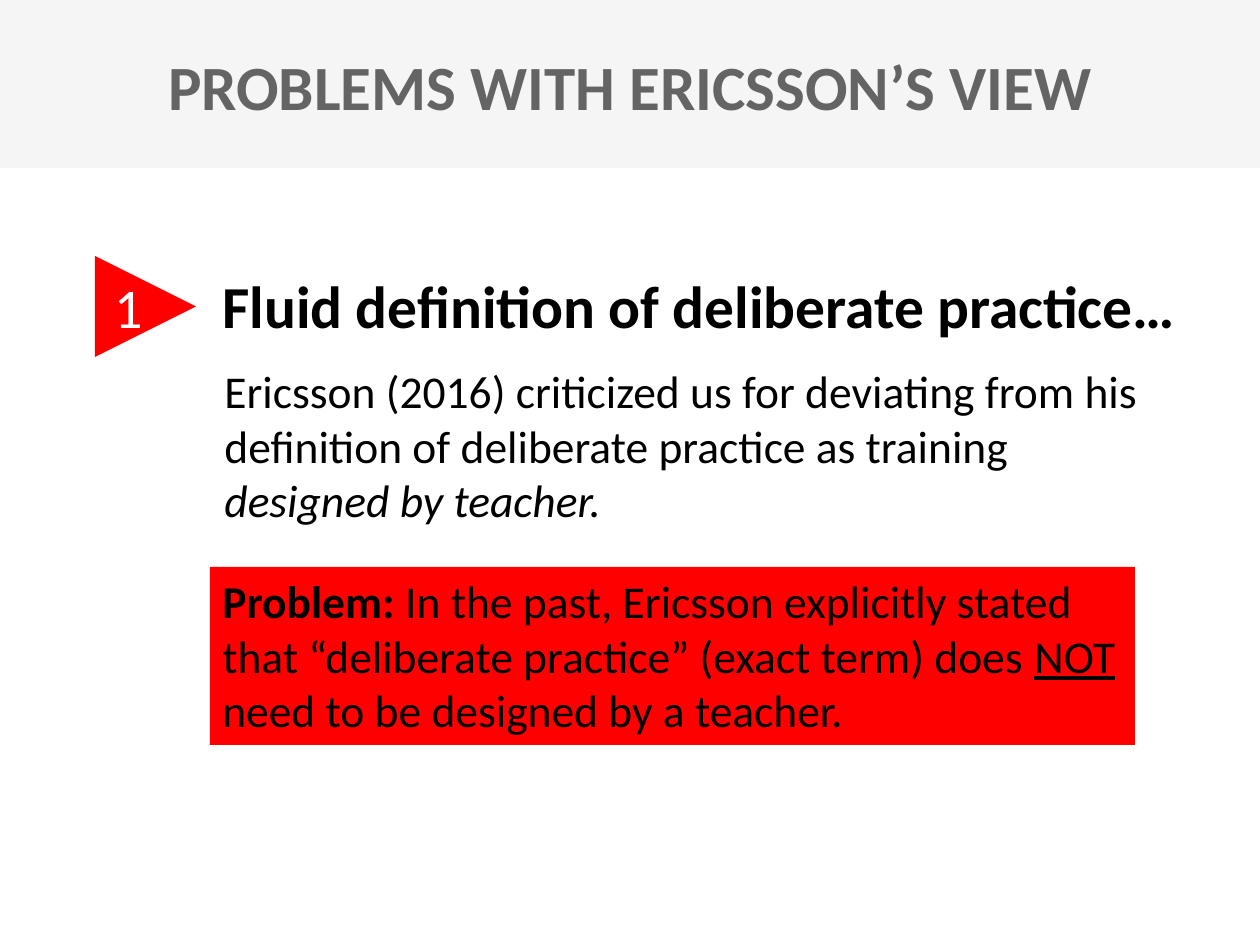
from pptx import Presentation
from pptx.dml.color import RGBColor
from pptx.enum.shapes import MSO_SHAPE
from pptx.enum.text import MSO_ANCHOR, MSO_AUTO_SIZE, PP_ALIGN
from pptx.util import Emu, Pt

PX = 914400 // 126
RED, BLACK, WHITE = "FF0000", "000000", "FFFFFF"
PALE, GREY = "F5F5F5", "646464"


def color(hex_code):
    return RGBColor.from_string(hex_code)


def px(*lengths):
    return [Emu(length * PX) for length in lengths]


class SlideBuilder:
    font_name = "Calibri"

    def __init__(self, slide):
        self.slide = slide

    def fill_frame(self, frame, runs, size, hex_code, align=PP_ALIGN.LEFT, anchor=MSO_ANCHOR.TOP):
        """Fill a frame with one paragraph of (text, font values) runs."""
        layout = {"word_wrap": True, "auto_size": MSO_AUTO_SIZE.NONE, "vertical_anchor": anchor}
        for name, value in layout.items():
            setattr(frame, name, value)
        paragraph = frame.paragraphs[0]
        paragraph.alignment = align
        for text, values in runs:
            run = paragraph.add_run()
            run.text = text
            style = {"name": self.font_name, "size": Pt(size), **values}
            for name, value in style.items():
                setattr(run.font, name, value)
            run.font.color.rgb = color(hex_code)

    def title(self, box, text, size, hex_code):
        heading = self.slide.shapes.title
        for name, value in zip(("left", "top", "width", "height"), px(*box)):
            setattr(heading, name, value)
        self.fill_frame(heading.text_frame, [(text, {"bold": True})], size, hex_code,
                        PP_ALIGN.CENTER, MSO_ANCHOR.MIDDLE)

    def text(self, box, runs, size, hex_code=BLACK):
        frame = self.slide.shapes.add_textbox(*px(*box)).text_frame
        self.fill_frame(frame, runs, size, hex_code)

    def shape(self, preset, box, fill, rotation=0):
        shape = self.slide.shapes.add_shape(preset, *px(*box))
        shape.rotation = rotation
        shape.shadow.inherit = False
        shape.fill.solid()
        shape.fill.fore_color.rgb = color(fill)
        shape.line.fill.background()
        return shape

    def band(self, box, fill):
        """Add a rectangle behind everything, the title included."""
        band = self.shape(MSO_SHAPE.RECTANGLE, box, fill)
        self.slide.shapes.title.element.addprevious(band.element)

    def callout(self, box, runs, size, fill):
        callout = self.shape(MSO_SHAPE.RECTANGLE, box, fill)
        self.fill_frame(callout.text_frame, runs, size, BLACK)


def main():
    presentation = Presentation()
    presentation.slide_width, presentation.slide_height = px(1260, 945)
    title_only = presentation.slide_layouts[5]
    builder = SlideBuilder(presentation.slides.add_slide(title_only))

    builder.band((0, 0, 1260, 168), PALE)
    builder.title((0, 55, 1260, 61), "PROBLEMS WITH ERICSSON’S VIEW", 36, GREY)

    builder.text((210, 263, 1008, 84),
                 [("Fluid definition of deliberate practice…", {"bold": True})], 34)
    builder.shape(MSO_SHAPE.ISOSCELES_TRIANGLE, (95, 256, 101, 101), RED, rotation=90)
    builder.text((102, 266, 171, 81), [("1", {})], 32, WHITE)

    criticism = [
        ("Ericsson (2016) criticized us for deviating from his definition of "
         "deliberate practice as training ", {}),
        ("designed by teacher.", {"italic": True}),
    ]
    builder.text((212, 357, 975, 178), criticism, 26)

    problem = [
        ("Problem:", {"bold": True}),
        (" In the past, Ericsson explicitly stated that “deliberate practice” "
         "(exact term) does ", {}),
        ("NOT", {"underline": True}),
        (" need to be designed by a teacher.", {}),
    ]
    builder.callout((210, 567, 925, 178), problem, 26, RED)

    presentation.save("out.pptx")


if __name__ == "__main__":
    main()
